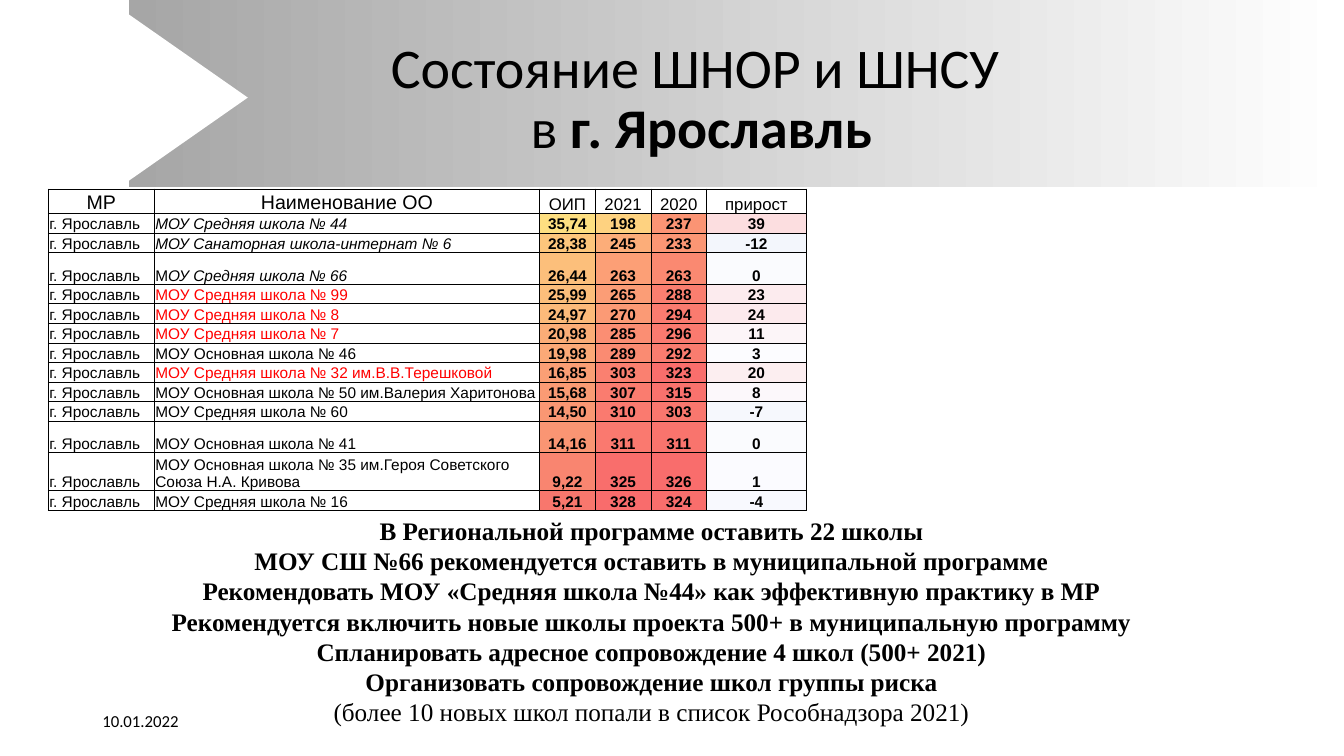
from lxml import etree
from pptx import Presentation
from pptx import util as u
from pptx.dml.color import RGBColor
from pptx.enum import shapes, text
from pptx.oxml import ns

PX = 9525
BLACK = RGBColor(0x00, 0x00, 0x00)
WHITE = RGBColor(0xFF, 0xFF, 0xFF)
GREY = RGBColor(0xA6, 0xA6, 0xA6)
RED = RGBColor(0xFF, 0x00, 0x00)

INDEX_SCALE = [(5.21, RGBColor(0xF8, 0x77, 0x6D)), (35.74, RGBColor(0xFE, 0xDF, 0x81))]
RANK_2021_SCALE = [(198, RGBColor(0xFE, 0xD2, 0x80)), (328, RGBColor(0xF9, 0x6C, 0x6C))]
RANK_2020_SCALE = [(233, RGBColor(0xFB, 0x96, 0x74)), (326, RGBColor(0xF9, 0x6D, 0x6C))]
GROWTH_SCALE = [(-12, RGBColor(0xF3, 0xF6, 0xFC)), (3, RGBColor(0xFC, 0xFC, 0xFF)),
                (39, RGBColor(0xFC, 0xDE, 0xE0))]
SCALES = [INDEX_SCALE, RANK_2021_SCALE, RANK_2020_SCALE, GROWTH_SCALE]

DISTRICT = "г. Ярославль"
HEADINGS = [("МР", 14), ("Наименование ОО", 14), ("ОИП", 12), ("2021", 12),
            ("2020", 12), ("прирост", 12)]
COLUMN_WIDTHS = [101, 367, 53, 53, 53, 95]
HEADER_HEIGHT, ROW_HEIGHT, TALL_HEIGHT, WRAPPED_HEIGHT = 23, 18, 30, 35
PLAIN, ITALIC, WARNING = {}, {"italic": True}, {"color": RED}
SCHOOLS = [
    ([("МОУ Средняя школа № 44", ITALIC)], ROW_HEIGHT, "35,74", "198", "237", "39"),
    ([("МОУ Санаторная школа-интернат № 6", ITALIC)], ROW_HEIGHT, "28,38", "245", "233", "-12"),
    ([("М", PLAIN), ("ОУ Средняя школа № 66", ITALIC)], TALL_HEIGHT, "26,44", "263", "263", "0"),
    ([("МОУ Средняя школа № 99", WARNING)], ROW_HEIGHT, "25,99", "265", "288", "23"),
    ([("МОУ Средняя школа № 8", WARNING)], ROW_HEIGHT, "24,97", "270", "294", "24"),
    ([("МОУ Средняя школа № 7", WARNING)], ROW_HEIGHT, "20,98", "285", "296", "11"),
    ([("МОУ Основная школа № 46", PLAIN)], ROW_HEIGHT, "19,98", "289", "292", "3"),
    ([("МОУ Средняя школа № 32 им.В.В.Терешковой", WARNING)], ROW_HEIGHT,
     "16,85", "303", "323", "20"),
    ([("МОУ Основная школа № 50 им.Валерия Харитонова", PLAIN)], ROW_HEIGHT,
     "15,68", "307", "315", "8"),
    ([("МОУ Средняя школа № 60", PLAIN)], ROW_HEIGHT, "14,50", "310", "303", "-7"),
    ([("МОУ Основная школа № 41", PLAIN)], TALL_HEIGHT, "14,16", "311", "311", "0"),
    ([("МОУ Основная школа № 35 им.Героя Советского Союза Н.А. Кривова", PLAIN)],
     WRAPPED_HEIGHT, "9,22", "325", "326", "1"),
    ([("МОУ Средняя школа № 16", PLAIN)], ROW_HEIGHT, "5,21", "328", "324", "-4"),
]
CONCLUSIONS = [
    "В Региональной программе оставить 22 школы",
    "МОУ СШ №66 рекомендуется оставить в муниципальной программе",
    "Рекомендовать МОУ «Средняя школа №44» как эффективную практику в МР",
    "Рекомендуется включить новые школы проекта 500+ в муниципальную программу",
    "Спланировать адресное сопровождение 4 школ (500+ 2021)",
    "Организовать сопровождение школ группы риска",
]
CONCLUSION_NOTE = "(более 10 новых школ попали в список Рособнадзора 2021)"


def to_emu(box):
    """Turn a box in px into EMU."""
    return [length * PX for length in box]


def add_run(paragraph, words, name, size, color=BLACK, **format_values):
    """Append a formatted run to a paragraph."""
    run = paragraph.add_run()
    run.text = words
    run.font.color.rgb = color
    for attribute, value in {"name": name, "size": u.Pt(size), **format_values}.items():
        setattr(run.font, attribute, value)


def add_text_frame(slide, box, **format_values):
    """Add a text box and return its formatted frame."""
    frame = slide.shapes.add_textbox(*to_emu(box)).text_frame
    for attribute, value in format_values.items():
        setattr(frame, attribute, value)
    return frame


def add_banner(slide, box):
    """Draw the gradient band with the white diamond cut into its left end."""
    left, top, width, height = box
    band = slide.shapes.add_shape(shapes.MSO_SHAPE.RECTANGLE, *to_emu(box))
    diamond = slide.shapes.add_shape(
        shapes.MSO_SHAPE.DIAMOND, *to_emu((left - 113, top + 14, 226, height - 20)))
    band.fill.gradient()
    band.fill.gradient_angle = 0
    for stop, color in zip(band.fill.gradient_stops, (GREY, WHITE)):
        stop.color.rgb = color
    diamond.fill.solid()
    diamond.fill.fore_color.rgb = WHITE
    for shape in (band, diamond):
        shape.line.fill.background()
        shape.shadow.inherit = False


def add_title(slide, box):
    """Write the two-line title."""
    frame = add_text_frame(slide, box, word_wrap=True,
                           vertical_anchor=text.MSO_ANCHOR.MIDDLE)
    paragraph = frame.paragraphs[0]
    paragraph.alignment = text.PP_ALIGN.CENTER
    paragraph.line_spacing = 0.9
    add_run(paragraph, "Состояние ШНОР и ШНСУ", "Calibri", 40)
    paragraph.add_line_break()
    add_run(paragraph, " в ", "Calibri", 40)
    add_run(paragraph, DISTRICT, "Calibri", 40, bold=True)


def scale_color(value, scale):
    """Interpolate the colour of a value between the points of a scale."""
    for (low, low_color), (high, high_color) in zip(scale, scale[1:]):
        if value <= high:
            break
    share = (value - low) / (high - low)
    return RGBColor(*(round(a + (b - a) * share) for a, b in zip(low_color, high_color)))


def fill_cell(cell, runs, size, alignment, fill=None, **format_values):
    """Write a bordered table cell with its runs and fill."""
    cell_format = {"margin_left": PX, "margin_right": PX, "margin_top": PX,
                   "margin_bottom": 0, "vertical_anchor": text.MSO_ANCHOR.BOTTOM}
    for attribute, value in cell_format.items():
        setattr(cell, attribute, value)
    properties = cell._tc.get_or_add_tcPr()
    for side in ("lnL", "lnR", "lnT", "lnB"):
        line = etree.SubElement(properties, ns.qn("a:" + side), w=str(u.Pt(0.5)))
        solid = etree.SubElement(line, ns.qn("a:solidFill"))
        etree.SubElement(solid, ns.qn("a:srgbClr"), val=str(BLACK))
    if fill is None:
        cell.fill.background()
    else:
        cell.fill.solid()
        cell.fill.fore_color.rgb = fill
    paragraph = cell.text_frame.paragraphs[0]
    paragraph.alignment = alignment
    for words, style in runs:
        add_run(paragraph, words, "Arial", size, **format_values, **style)


def add_school_table(slide, box):
    """Build the table of schools with colour scales in its number columns."""
    table = slide.shapes.add_table(
        len(SCHOOLS) + 1, len(HEADINGS), *to_emu(box)).table
    table.first_row = table.horz_banding = False
    for column, width in zip(table.columns, COLUMN_WIDTHS):
        column.width = width * PX
    heights = [HEADER_HEIGHT] + [school[1] for school in SCHOOLS]
    for row, height in zip(table.rows, heights):
        row.height = height * PX
    left, center = text.PP_ALIGN.LEFT, text.PP_ALIGN.CENTER
    for index, (heading, size) in enumerate(HEADINGS):
        fill_cell(table.cell(0, index), [(heading, PLAIN)], size, center)
    for index, (name_runs, _, *numbers) in enumerate(SCHOOLS, 1):
        fill_cell(table.cell(index, 0), [(DISTRICT, PLAIN)], 11, left)
        fill_cell(table.cell(index, 1), name_runs, 11, left)
        for column, (number, scale) in enumerate(zip(numbers, SCALES), 2):
            color = scale_color(float(number.replace(",", ".")), scale)
            fill_cell(table.cell(index, column), [(number, PLAIN)], 11, center,
                      color, bold=True)


def add_conclusions(slide, box):
    """Write the centred recommendations and the closing note."""
    frame = add_text_frame(slide, box, word_wrap=False,
                           auto_size=text.MSO_AUTO_SIZE.SHAPE_TO_FIT_TEXT)
    for index, words in enumerate(CONCLUSIONS + [CONCLUSION_NOTE]):
        paragraph = frame.add_paragraph() if index else frame.paragraphs[0]
        paragraph.alignment = text.PP_ALIGN.CENTER
        add_run(paragraph, words, "Times New Roman", 18, bold=words != CONCLUSION_NOTE)


def add_date(slide, box):
    """Write the date in the footer."""
    frame = add_text_frame(slide, box, word_wrap=True,
                           vertical_anchor=text.MSO_ANCHOR.MIDDLE)
    add_run(frame.paragraphs[0], "10.01.2022", "Calibri", 12)


def main():
    """Build the slide and save the presentation."""
    presentation = Presentation()
    presentation.slide_width, presentation.slide_height = to_emu((1280, 720))
    slide = presentation.slides.add_slide(presentation.slide_layouts[6])
    add_banner(slide, (123, 0, 1157, 178))
    add_title(slide, (110, 26, 1104, 139))
    add_conclusions(slide, (149, 486, 943, 213))
    add_school_table(slide, (46, 180, 722, 305))
    add_date(slide, (88, 667, 288, 38))
    presentation.save("out.pptx")


if __name__ == "__main__":
    main()
